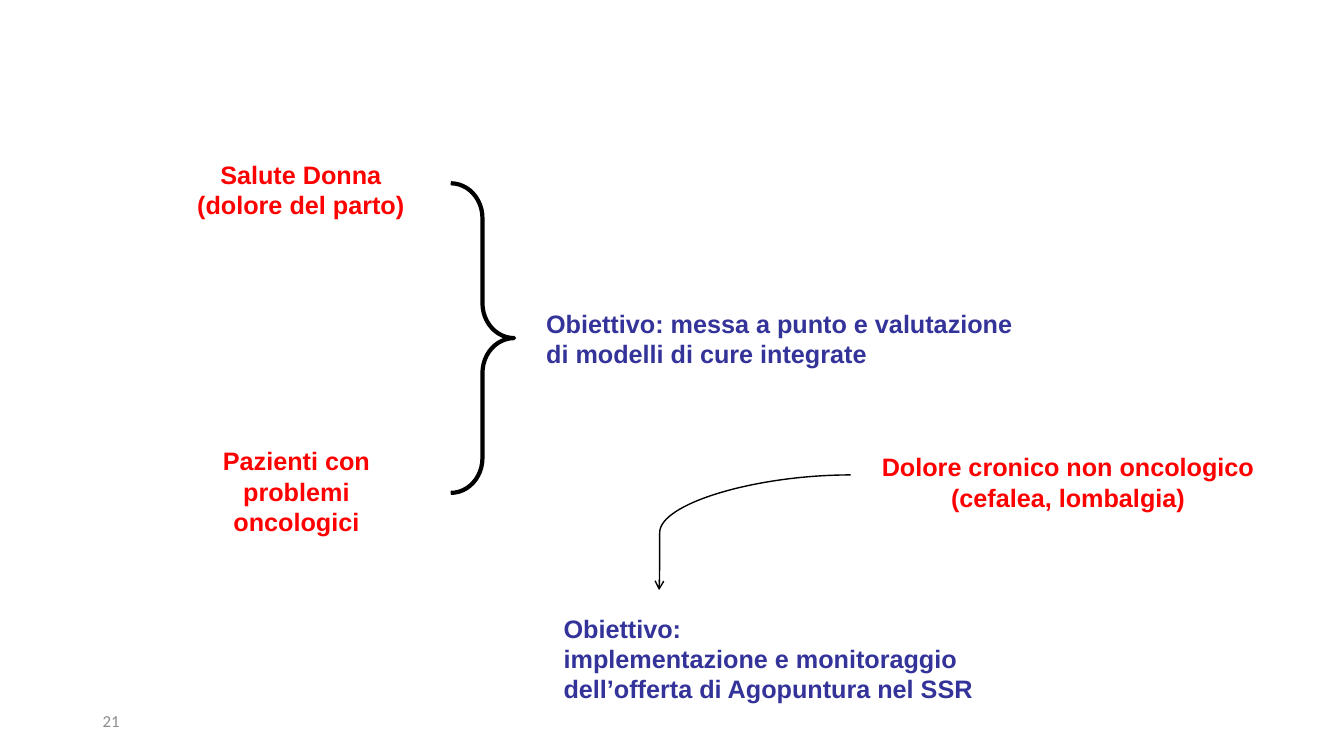
from dataclasses import dataclass

from lxml import etree
from pptx import Presentation
from pptx.dml.color import RGBColor
from pptx.enum.shapes import MSO_CONNECTOR, MSO_SHAPE
from pptx.enum.text import MSO_ANCHOR, PP_ALIGN
from pptx.oxml.ns import qn
from pptx.util import Inches, Pt

CURVE = MSO_CONNECTOR.CURVE
RIGHT_BRACE = MSO_SHAPE.RIGHT_BRACE
TOP, MIDDLE = MSO_ANCHOR.TOP, MSO_ANCHOR.MIDDLE
LEFT, CENTER = PP_ALIGN.LEFT, PP_ALIGN.CENTER


@dataclass(frozen=True)
class Theme:
    topic: RGBColor = RGBColor(0xFF, 0x00, 0x00)
    goal: RGBColor = RGBColor(0x33, 0x33, 0x99)
    stroke: RGBColor = RGBColor(0x00, 0x00, 0x00)
    number: RGBColor = RGBColor(0x8C, 0x8C, 0x8C)
    text_font: str = "Arial"
    number_font: str = "Calibri"
    text_size: int = 18
    number_size: int = 12
    brace_width: int = 3
    arrow_width: int = 1


@dataclass(frozen=True)
class Box:
    left: float
    top: float
    width: float
    height: float

    def inner(self, left, top, width, height):
        return Box(self.left + left * self.width, self.top + top * self.height,
                   width * self.width, height * self.height)

    def lengths(self):
        return [Inches(value) for value in (self.left, self.top, self.width, self.height)]


THEME = Theme()
PAGE = Box(0, 0, 13.33, 7.5)
TEXT_FORMAT = {"name": THEME.text_font, "size": Pt(THEME.text_size), "bold": True}
NUMBER_FORMAT = {"name": THEME.number_font, "size": Pt(THEME.number_size), "bold": False}


def add_text(page, box, lines, color, align=LEFT, wrap=False, anchor=TOP, style=TEXT_FORMAT):
    frame = page.shapes.add_textbox(*box.lengths()).text_frame
    frame.word_wrap = wrap
    frame.vertical_anchor = anchor
    for index, line in enumerate(lines):
        para = frame.paragraphs[0] if index == 0 else frame.add_paragraph()
        para.alignment = align
        span = para.add_run()
        span.text = line
        for name, value in style.items():
            setattr(span.font, name, value)
        span.font.color.rgb = color


def add_brace(page, box):
    brace = page.shapes.add_shape(RIGHT_BRACE, *box.lengths())
    brace.shadow.inherit = False
    brace.fill.background()
    brace.line.color.rgb = THEME.stroke
    brace.line.width = Pt(THEME.brace_width)
    brace.adjustments[0] = 0.55


def add_curved_arrow(page, box):
    left, top, width, height = box.lengths()
    arrow = page.shapes.add_connector(CURVE, left + width, top, left, top + height)
    arrow.line.color.rgb = THEME.stroke
    arrow.line.width = Pt(THEME.arrow_width)
    properties = arrow._element.spPr
    etree.SubElement(properties.get_or_add_ln(), qn("a:tailEnd"), type="arrow")
    etree.SubElement(properties, qn("a:effectLst"))
    guides = properties.find(qn("a:prstGeom")).get_or_add_avLst()
    etree.SubElement(guides, qn("a:gd"), name="adj1", fmla="val 99700")


def add_integrated_care(page, box):
    add_text(page, box.inner(0.01, 0, 0.26, 0.18),
             ["Salute Donna", "(dolore del parto)"], THEME.topic, CENTER)
    add_text(page, box.inner(0.01, 0.74, 0.25, 0.27),
             ["Pazienti con problemi oncologici"], THEME.topic, CENTER, wrap=True)
    add_brace(page, box.inner(0.31, 0.075, 0.072, 0.8))
    add_text(page, box.inner(0.407, 0.385, 0.592, 0.185),
             ["Obiettivo: messa a punto e valutazione", "di modelli di cure integrate"],
             THEME.goal)


def add_acupuncture(page, box):
    add_text(page, box.inner(0.444, 0, 0.556, 0.27),
             ["Dolore cronico non oncologico", "(cefalea, lombalgia)"], THEME.topic, CENTER)
    add_curved_arrow(page, box.inner(0.148, 0.107, 0.269, 0.438))
    add_text(page, box.inner(0, 0.613, 0.611, 0.387),
             ["Obiettivo:", "implementazione e monitoraggio",
              "dell’offerta di Agopuntura nel SSR"], THEME.goal)


def add_page_number(page, box):
    add_text(page, box, ["21"], THEME.number, anchor=MIDDLE, style=NUMBER_FORMAT)


def main():
    deck = Presentation()
    deck.slide_width, deck.slide_height = PAGE.lengths()[2:]
    page = deck.slides.add_slide(deck.slide_layouts[6])
    add_integrated_care(page, PAGE.inner(0.132, 0.204, 0.656, 0.512))
    add_acupuncture(page, PAGE.inner(0.412, 0.591, 0.53, 0.348))
    add_page_number(page, PAGE.inner(0.069, 0.927, 0.225, 0.053))
    deck.save("out.pptx")


if __name__ == "__main__":
    main()
